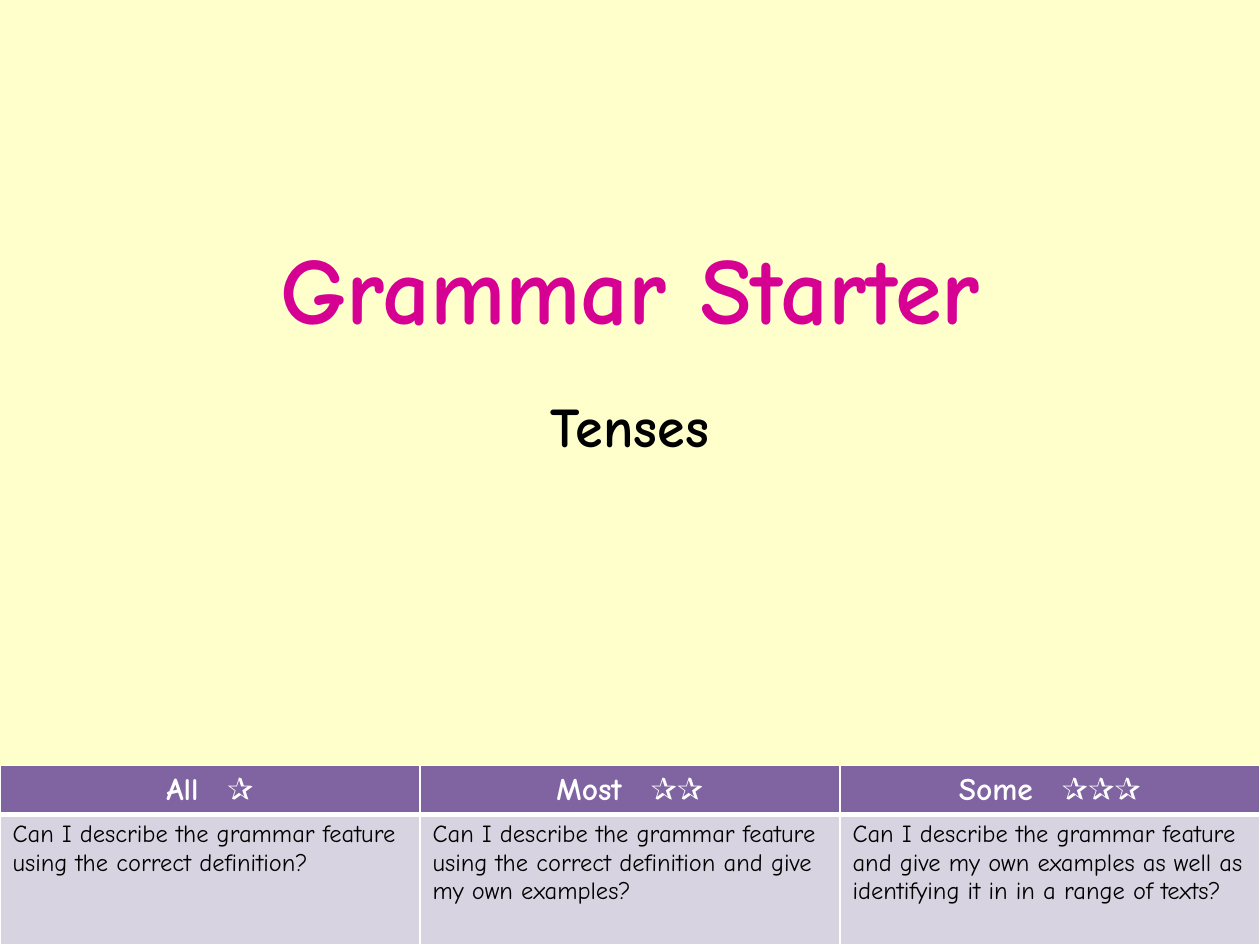
from lxml.etree import SubElement
from pptx import Presentation
from pptx.dml.color import RGBColor
from pptx.enum.text import MSO_ANCHOR, PP_ALIGN
from pptx.oxml.ns import qn
from pptx.util import Inches, Pt

COLORS = {"page": "FFFFCC", "title": "D60093", "text": "000000",
          "head": "8064A2", "body": "D8D3E0", "line": "FFFFFF"}
FONT = "Comic Neue"
GOALS = [
    ("All", "✰", "Can I describe the grammar feature using the correct definition?"),
    ("Most", "✰✰", "Can I describe the grammar feature using the correct definition "
     "and give my own examples?"),
    ("Some", "✰✰✰", "Can I describe the grammar feature and give my own examples "
     "as well as identifying it in in a range of texts?"),
]


def tint(name):
    return RGBColor.from_string(COLORS[name])


class Deck:
    def __init__(self):
        self.prs = Presentation()
        self.prs.slide_width, self.prs.slide_height = Inches(10), Inches(7.5)
        self.slide = self.prs.slides.add_slide(self.prs.slide_layouts[0])
        fill = self.slide.background.fill
        fill.solid()
        fill.fore_color.rgb = tint("page")

    def box(self, *shares):
        """Turn shares of the slide (left, top, width, height) into lengths."""
        sides = (self.prs.slide_width, self.prs.slide_height) * 2
        return [round(share * side) for share, side in zip(shares, sides)]

    def style(self, para, size, color, bold=True, align=PP_ALIGN.CENTER):
        para.alignment = align
        font = para.font
        font.name, font.size, font.bold = FONT, Pt(size), bold
        font.color.rgb = tint(color)

    def holder(self, index, text, area, size, color, anchor):
        shape = self.slide.placeholders[index]
        shape.left, shape.top, shape.width, shape.height = self.box(*area)
        frame = shape.text_frame
        frame.text = text
        frame.vertical_anchor = anchor
        self.style(frame.paragraphs[0], size, color)

    def cell(self, cell, fill, top, bottom):
        """Border and fill a cell, and return its paragraph."""
        props = cell._tc.get_or_add_tcPr()
        for side, width in zip("LRTB", (1, 1, top, bottom)):
            line = SubElement(props, qn(f"a:ln{side}"), w=str(Pt(width)))
            solid = SubElement(line, qn("a:solidFill"))
            SubElement(solid, qn("a:srgbClr"), val=COLORS["line"])
        cell.fill.solid()
        cell.fill.fore_color.rgb = tint(fill)
        return cell.text_frame.paragraphs[0]

    def table(self, goals, area, heights):
        table = self.slide.shapes.add_table(2, len(goals), *self.box(*area)).table
        for row, height in zip(table.rows, heights):
            row.height = Inches(height)
        for col, (name, stars, goal) in enumerate(goals):
            head = self.cell(table.cell(0, col), "head", 1, 3)
            for part in (name, " ", stars):
                run = head.add_run()
                run.text = part
                if part == " ":
                    run.font._element.set("spc", "1000")  # wide gap before the stars
            self.style(head, 18, "line")
            body = self.cell(table.cell(1, col), "body", 3, 1)
            body.text = goal
            self.style(body, 14, "text", False, PP_ALIGN.LEFT)


def main():
    deck = Deck()
    deck.holder(0, "Grammar Starter", (0.075, 0.196, 0.85, 0.214), 54, "title",
                MSO_ANCHOR.MIDDLE)
    deck.holder(1, "Tenses", (0, 0.408, 1, 0.256), 32, "text", MSO_ANCHOR.TOP)
    deck.table(GOALS, (0, 0.81, 1, 0.19), (0.37, 1.03))
    deck.prs.save("out.pptx")


if __name__ == "__main__":
    main()
